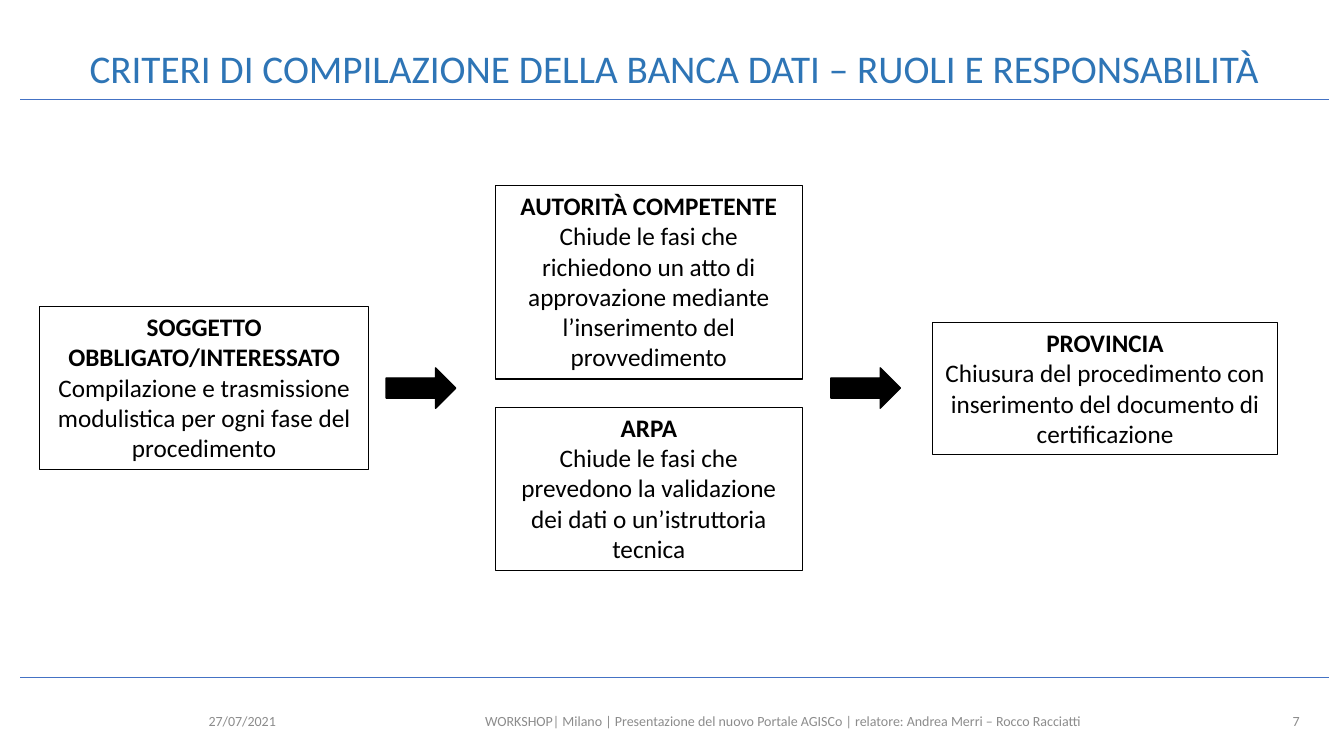
from dataclasses import dataclass

import pptx
import pptx.dml.color
import pptx.enum.shapes
import pptx.enum.text
import pptx.oxml.ns
import pptx.slide
import pptx.text.text
import pptx.util
from lxml import etree

SCALE = 9144  # EMU per px, 100 px to the inch
Align = pptx.enum.text.PP_ALIGN
Anchor = pptx.enum.text.MSO_ANCHOR
Shape = pptx.enum.shapes.MSO_SHAPE


@dataclass(frozen=True)
class Theme:
    font: str = "Calibri"
    title: str = "2E75B6"
    rule: str = "4472C4"
    ink: str = "000000"
    muted: str = "8C8C8C"
    head: int = 28
    body: int = 18
    small: int = 10


@dataclass(frozen=True)
class Area:
    left: int
    top: int
    width: int
    height: int

    def emu(self) -> list[int]:
        return [px * SCALE for px in (self.left, self.top, self.width, self.height)]


@dataclass(frozen=True)
class Role:
    area: Area
    name: str
    duty: str


@dataclass(frozen=True)
class Label:
    area: Area
    text: str
    size: int
    color: str
    align: Align
    spacing: float = 1.0


THEME = Theme()
FOOT_TOP, FOOT_HIGH = 695, 40
RULES = (99, 672)
ARROWS = (383, 824)

ROLES = (
    Role(Area(39, 304, 327, 162), "SOGGETTO OBBLIGATO/INTERESSATO",
         "Compilazione e trasmissione modulistica per ogni fase del procedimento"),
    Role(Area(491, 184, 305, 192), "AUTORITÀ COMPETENTE",
         "Chiude le fasi che richiedono un atto di approvazione mediante "
         "l’inserimento del provvedimento"),
    Role(Area(491, 404, 305, 162), "ARPA",
         "Chiude le fasi che prevedono la validazione dei dati o un’istruttoria tecnica"),
    Role(Area(925, 320, 342, 131), "PROVINCIA",
         "Chiusura del procedimento con inserimento del documento di certificazione"),
)


def foot(left: int, width: int, text: str, align: Align) -> Label:
    area = Area(left, FOOT_TOP, width, FOOT_HIGH)
    return Label(area, text, THEME.small, THEME.muted, align)


LABELS = (
    Label(Area(39, 40, 1259, 60),
          "CRITERI DI COMPILAZIONE DELLA BANCA DATI – RUOLI E RESPONSABILITÀ",
          THEME.head, THEME.title, Align.CENTER, 0.9),
    foot(197, 96, "27/07/2021", Align.LEFT),
    foot(305, 943, "WORKSHOP| Milano | Presentazione del nuovo Portale AGISCo | "
         "relatore: Andrea Merri – Rocco Racciatti", Align.CENTER),
    foot(1256, 43, "7", Align.RIGHT),
)


def paint(code: str) -> pptx.dml.color.RGBColor:
    return pptx.dml.color.RGBColor.from_string(code)


def style(para: pptx.text.text._Paragraph, size: int, color: str,
          align: Align, bold: bool = False) -> None:
    para.alignment = align
    para.font.name = THEME.font
    para.font.size = pptx.util.Pt(size)
    para.font.bold = bold
    para.font.color.rgb = paint(color)


def draw_rule(slide: pptx.slide.Slide, top: int) -> None:
    line = slide.shapes.add_connector(
        pptx.enum.shapes.MSO_CONNECTOR.STRAIGHT,
        20 * SCALE, top * SCALE, 1318 * SCALE, top * SCALE)
    line.line.color.rgb = paint(THEME.rule)
    line.line.width = pptx.util.Pt(0.5)
    etree.SubElement(line.element.spPr, pptx.oxml.ns.qn("a:effectLst"))


def draw_label(slide: pptx.slide.Slide, label: Label) -> None:
    frame = slide.shapes.add_textbox(*label.area.emu()).text_frame
    frame.word_wrap = True
    frame.vertical_anchor = Anchor.MIDDLE
    para = frame.paragraphs[0]
    para.text = label.text
    para.line_spacing = label.spacing
    style(para, label.size, label.color, label.align)


def draw_role(slide: pptx.slide.Slide, role: Role) -> None:
    box = slide.shapes.add_shape(Shape.RECTANGLE, *role.area.emu())
    box.shadow.inherit = False
    box.fill.background()
    box.line.color.rgb = paint(THEME.ink)
    box.line.width = pptx.util.Pt(0.75)
    frame = box.text_frame
    frame.word_wrap = True
    frame.auto_size = pptx.enum.text.MSO_AUTO_SIZE.SHAPE_TO_FIT_TEXT
    frame.vertical_anchor = Anchor.TOP
    frame.text = f"{role.name}\n{role.duty}"
    for para, bold in zip(frame.paragraphs, (True, False)):
        style(para, THEME.body, THEME.ink, Align.CENTER, bold)


def draw_arrow(slide: pptx.slide.Slide, left: int) -> None:
    arrow = slide.shapes.add_shape(Shape.RIGHT_ARROW, *Area(left, 365, 69, 40).emu())
    arrow.shadow.inherit = False
    arrow.fill.solid()
    arrow.fill.fore_color.rgb = paint(THEME.ink)
    arrow.line.color.rgb = paint(THEME.ink)
    arrow.line.width = pptx.util.Pt(1)


def main() -> None:
    deck = pptx.Presentation()
    deck.slide_width, deck.slide_height = 1333 * SCALE, 750 * SCALE
    slide = deck.slides.add_slide(deck.slide_layouts[6])
    for top in RULES:
        draw_rule(slide, top)
    for label in LABELS:
        draw_label(slide, label)
    for role in ROLES:
        draw_role(slide, role)
    for left in ARROWS:
        draw_arrow(slide, left)
    deck.save("out.pptx")


if __name__ == "__main__":
    main()
